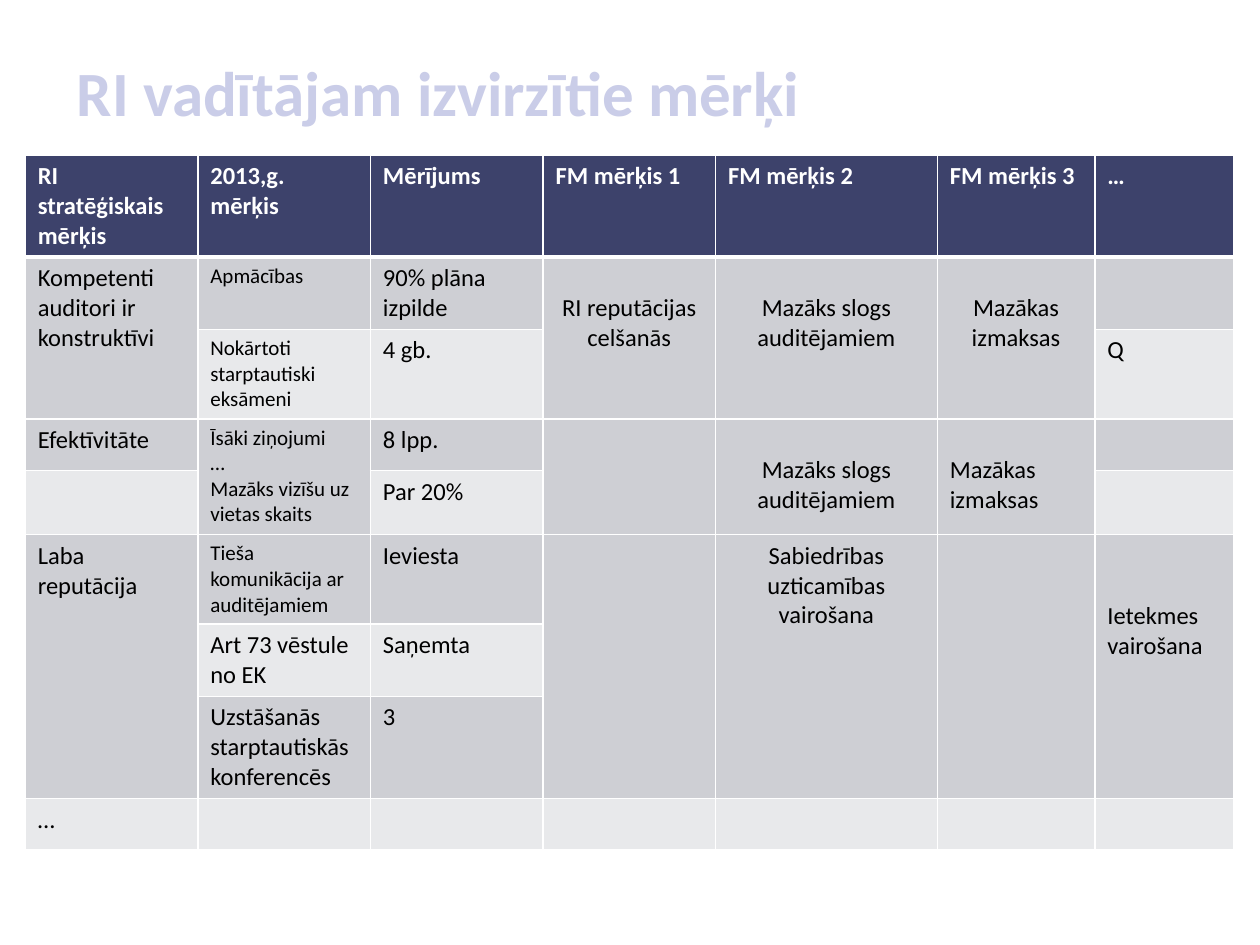
from lxml.etree import SubElement
from pptx import Presentation
from pptx.dml.color import RGBColor
from pptx.enum.text import MSO_ANCHOR, PP_ALIGN
from pptx.oxml.ns import qn
from pptx.util import Inches, Pt

FONT = "Calibri"
INK = {"title": "CACDE8", "head": "3D426B", "odd": "CECFD4",
       "even": "E8E9EB", "line": "FFFFFF", "text": "000000"}
COLS = [1.37, 1.37, 1.37, 1.37, 1.76, 1.25, 1.1]
ROWS = [0.81, 0.57, 0.71, 0.41, 0.51, 0.71, 0.57, 0.81, 0.41]
GRID = [
    ["RI stratēģiskais mērķis", "2013,g. mērķis", "Mērījums",
     "FM mērķis 1", "FM mērķis 2", "FM mērķis 3", "…"],
    ["Kompetenti auditori ir konstruktīvi", "Apmācības", "90% plāna izpilde",
     "RI reputācijas celšanās", "Mazāks slogs auditējamiem", "Mazākas izmaksas", ""],
    ["", "Nokārtoti starptautiski eksāmeni", "4 gb.", "", "", "", "Q"],
    ["Efektīvitāte", "Īsāki ziņojumi\n…\nMazāks vizīšu uz vietas skaits", "8 lpp.",
     "", "Mazāks slogs auditējamiem", "Mazākas izmaksas", ""],
    ["", "", "Par 20%", "", "", "", ""],
    ["Laba reputācija", "Tieša komunikācija ar auditējamiem", "Ieviesta",
     "", "Sabiedrības uzticamības vairošana", "", "Ietekmes vairošana"],
    ["", "Art 73 vēstule no EK", "Saņemta", "", "", "", ""],
    ["", "Uzstāšanās starptautiskās konferencēs", "3", "", "", "", ""],
    ["…", "", "", "", "", "", ""],
]
SPANS = {1: (2, [0, 3, 4, 5]), 3: (2, [1, 3, 4, 5]), 5: (3, [0, 3, 4, 5, 6])}
MID = {(1, 3), (1, 4), (1, 5), (3, 4), (5, 4)}
DROP = {(1, 3): 1, (1, 4): 1, (1, 5): 1, (3, 4): 1, (3, 5): 1, (5, 6): 2}
SMALL = {(1, 1), (2, 1), (3, 1), (5, 1)}


def add_run(para, text, size, color, bold=False):
    """Add one formatted run to a paragraph."""
    run = para.add_run()
    run.text = text
    font = run.font
    font.name, font.size, font.bold = FONT, Pt(size), bold
    font.color.rgb = RGBColor.from_string(INK[color])


def add_title(slide, wide, high):
    """Place and fill the title placeholder."""
    box = slide.shapes.title
    box.left, box.top = int(wide * 0.051), int(high * 0.05)
    box.width, box.height = int(wide * 0.9), int(high * 0.093)
    frame = box.text_frame
    frame.vertical_anchor = MSO_ANCHOR.MIDDLE
    para = frame.paragraphs[0]
    para.alignment = PP_ALIGN.LEFT
    add_run(para, "RI vadītājam izvirzītie mērķi", 36, "title", True)


def set_edges(cell, head):
    """Draw the cell borders, thick below the header."""
    props = cell._tc.get_or_add_tcPr()
    for spot, side in enumerate("LRTB"):
        width = Pt(3 if head and side == "B" else 1)
        line = SubElement(props, qn(f"a:ln{side}"), w=str(width))
        fill = SubElement(line, qn("a:solidFill"))
        SubElement(fill, qn("a:srgbClr"), val=INK["line"])
        props.insert(spot, line)


def fill_cell(cell, row, col, text):
    """Style one cell and write its paragraphs."""
    head = row == 0
    shade = "head" if head else "odd" if row % 2 else "even"
    cell.fill.solid()
    cell.fill.fore_color.rgb = RGBColor.from_string(INK[shade])
    set_edges(cell, head)
    spot = row, col
    cell.margin_top = Inches(0.05 + 0.24 * DROP.get(spot, 0))
    frame = cell.text_frame
    for num, part in enumerate(text.split("\n") if text else []):
        para = frame.add_paragraph() if num else frame.paragraphs[0]
        para.alignment = PP_ALIGN.CENTER if spot in MID else PP_ALIGN.LEFT
        add_run(para, part, 12 if spot in SMALL else 14,
                "line" if head else "text", head)


def add_goals(slide, wide, high):
    """Build the goal table with its merged blocks."""
    table = slide.shapes.add_table(
        len(ROWS), len(COLS), int(wide * 0.02), int(high * 0.164),
        Inches(sum(COLS)), Inches(sum(ROWS))).table
    for col, size in zip(table.columns, COLS):
        col.width = Inches(size)
    for row, size in zip(table.rows, ROWS):
        row.height = Inches(size)
    for row, texts in enumerate(GRID):
        for col, text in enumerate(texts):
            fill_cell(table.cell(row, col), row, col, text)
    for row, (deep, cols) in SPANS.items():
        for col in cols:
            table.cell(row, col).merge(table.cell(row + deep - 1, col))


def main():
    """Build and save the slide."""
    deck = Presentation()
    deck.slide_width, deck.slide_height = Inches(10), Inches(7.5)
    slide = deck.slides.add_slide(deck.slide_layouts[5])
    add_title(slide, deck.slide_width, deck.slide_height)
    add_goals(slide, deck.slide_width, deck.slide_height)
    deck.save("out.pptx")


if __name__ == "__main__":
    main()
